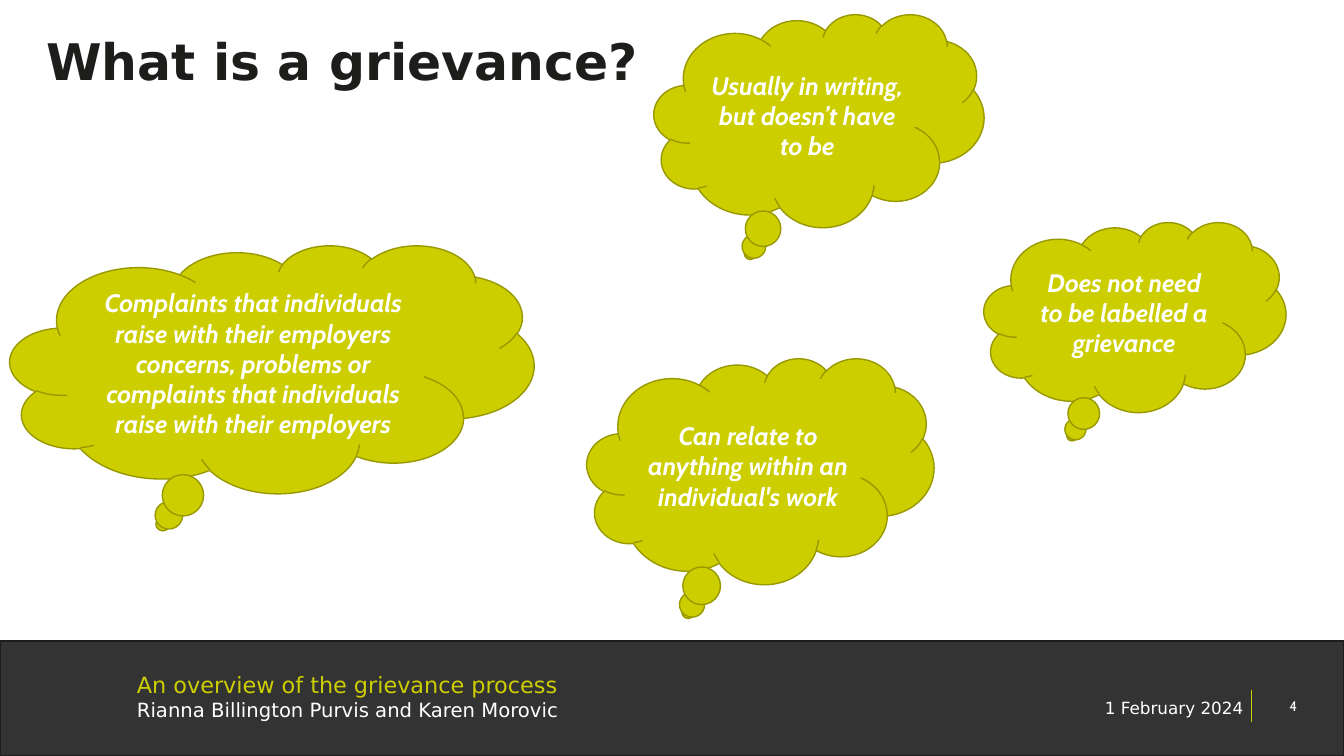
"""Build the slide that explains what a grievance is."""
from dataclasses import dataclass

from lxml.etree import SubElement as Sub
from pptx import Presentation
from pptx.dml.color import RGBColor as RGB
from pptx.enum.shapes import MSO_CONNECTOR as Link, MSO_SHAPE as Kind
from pptx.enum.text import MSO_ANCHOR as Anchor, MSO_AUTO_SIZE as Fit, PP_ALIGN as Align
from pptx.oxml.ns import qn
from pptx.util import Pt

TITLE = "What is a grievance?"
CLOUDS = [
    ((654, 14, 330, 213), ["Usually in writing, but doesn’t have to be"]),
    ((10, 245, 524, 248), [
        "Complaints that individuals raise with their employers",
        "concerns, problems or complaints that individuals raise with their employers",
    ]),
    ((587, 358, 347, 226), ["Can relate to anything within an individual's work"]),
    ((984, 222, 302, 190), ["Does not need to be labelled a grievance"]),
]
TOPIC = "An overview of the grievance process"
NAMES = "Rianna Billington Purvis and Karen Morovic"
DATE = "1 February 2024"
NUMBER = "4"

SIZE = (1344, 756)
BAR = (0, 641, 1344, 115)
RULE = (1251, 690, 1251, 722)
HEAD = (36, 0, 617, 96)
FOOT = (127, 663, 605, 66)
DAY = (1095, 693, 167, 30)
PAGE = (1252, 696, 55, 23)


@dataclass(frozen=True)
class Theme:
    """Colours, fonts and type sizes."""
    lime: RGB = RGB(0xCD, 0xCE, 0x00)
    olive: RGB = RGB(0x98, 0x98, 0x00)
    ink: RGB = RGB(0x1D, 0x1D, 0x1B)
    black: RGB = RGB(0, 0, 0)
    white: RGB = RGB(0xFF, 0xFF, 0xFF)
    sans: str = "DejaVu Sans"
    round: str = "Cabin"
    title: int = 36
    cloud: int = 18
    topic: int = 16
    names: int = 14
    date: int = 12
    page: int = 10


theme = Theme()


def emu(box):
    """Turn px lengths into EMU."""
    return [round(v * 914400 / 100.8) for v in box]


def style(font, size, name, color, bold=None, italic=None):
    """Format one font."""
    font.size, font.name = Pt(size), name
    font.bold, font.italic = bold, italic
    font.color.rgb = color


def draw(slide, kind, box, fill, edge):
    """Add a filled and outlined shape."""
    shape = slide.shapes.add_shape(kind, *emu(box))
    shape.shadow.inherit = False
    shape.fill.solid()
    shape.fill.fore_color.rgb = fill
    shape.line.color.rgb = edge
    shape.line.width = Pt(1)
    return shape


def write(slide, box, anchor=Anchor.MIDDLE):
    """Add a wrapping text box and return its frame."""
    frame = slide.shapes.add_textbox(*emu(box)).text_frame
    frame.word_wrap = True
    frame.vertical_anchor = anchor
    return frame


def add_base(slide):
    """Draw the footer band and its rule."""
    bar = draw(slide, Kind.RECTANGLE, BAR, theme.black, theme.ink)
    tint = bar.fill._xPr.find(qn("a:solidFill"))[0]
    Sub(tint, qn("a:alpha"), val="80000")
    rule = slide.shapes.add_connector(Link.STRAIGHT, *emu(RULE))
    rule.line.color.rgb = theme.lime
    rule.line.width = Pt(0.5)
    Sub(rule._element.spPr, qn("a:effectLst"))


def add_title(slide):
    """Fill the title placeholder."""
    title = slide.shapes.title
    title.left, title.top, title.width, title.height = emu(HEAD)
    frame = title.text_frame
    frame.text = TITLE
    frame.vertical_anchor = Anchor.BOTTOM
    frame.auto_size = Fit.NONE
    para = frame.paragraphs[0]
    para.alignment = Align.LEFT
    para.line_spacing = 0.9
    style(para.font, theme.title, theme.sans, theme.ink, bold=True)


def add_cloud(slide, box, lines):
    """Draw one thought cloud."""
    cloud = draw(slide, Kind.CLOUD_CALLOUT, box, theme.lime, theme.olive)
    frame = cloud.text_frame
    frame.text = "\n".join(lines)
    frame.vertical_anchor = Anchor.MIDDLE
    for para in frame.paragraphs:
        para.alignment = Align.CENTER
        style(para.font, theme.cloud, theme.round, theme.white, bold=True, italic=True)


def add_foot(slide):
    """Write the topic, names, date and page number."""
    para = write(slide, FOOT).paragraphs[0]
    topic = para.add_run()
    topic.text = TOPIC
    style(topic.font, theme.topic, theme.sans, theme.lime)
    para.add_line_break()
    names = para.add_run()
    names.text = NAMES
    style(names.font, theme.names, theme.sans, theme.white)

    day = write(slide, DAY, Anchor.TOP)
    day.auto_size = Fit.SHAPE_TO_FIT_TEXT
    day.text = DATE
    style(day.paragraphs[0].font, theme.date, theme.sans, theme.white)

    page = write(slide, PAGE)
    page.text = NUMBER
    para = page.paragraphs[0]
    para.alignment = Align.RIGHT
    para.line_spacing = 0.8
    para.space_after = Pt(6)
    style(para.font, theme.page, theme.round, theme.white)


def main():
    """Put the slide together and save it."""
    deck = Presentation()
    deck.slide_width, deck.slide_height = emu(SIZE)
    slide = deck.slides.add_slide(deck.slide_layouts[5])
    add_base(slide)
    add_title(slide)
    for box, lines in CLOUDS:
        add_cloud(slide, box, lines)
    add_foot(slide)
    deck.save("out.pptx")


if __name__ == "__main__":
    main()
